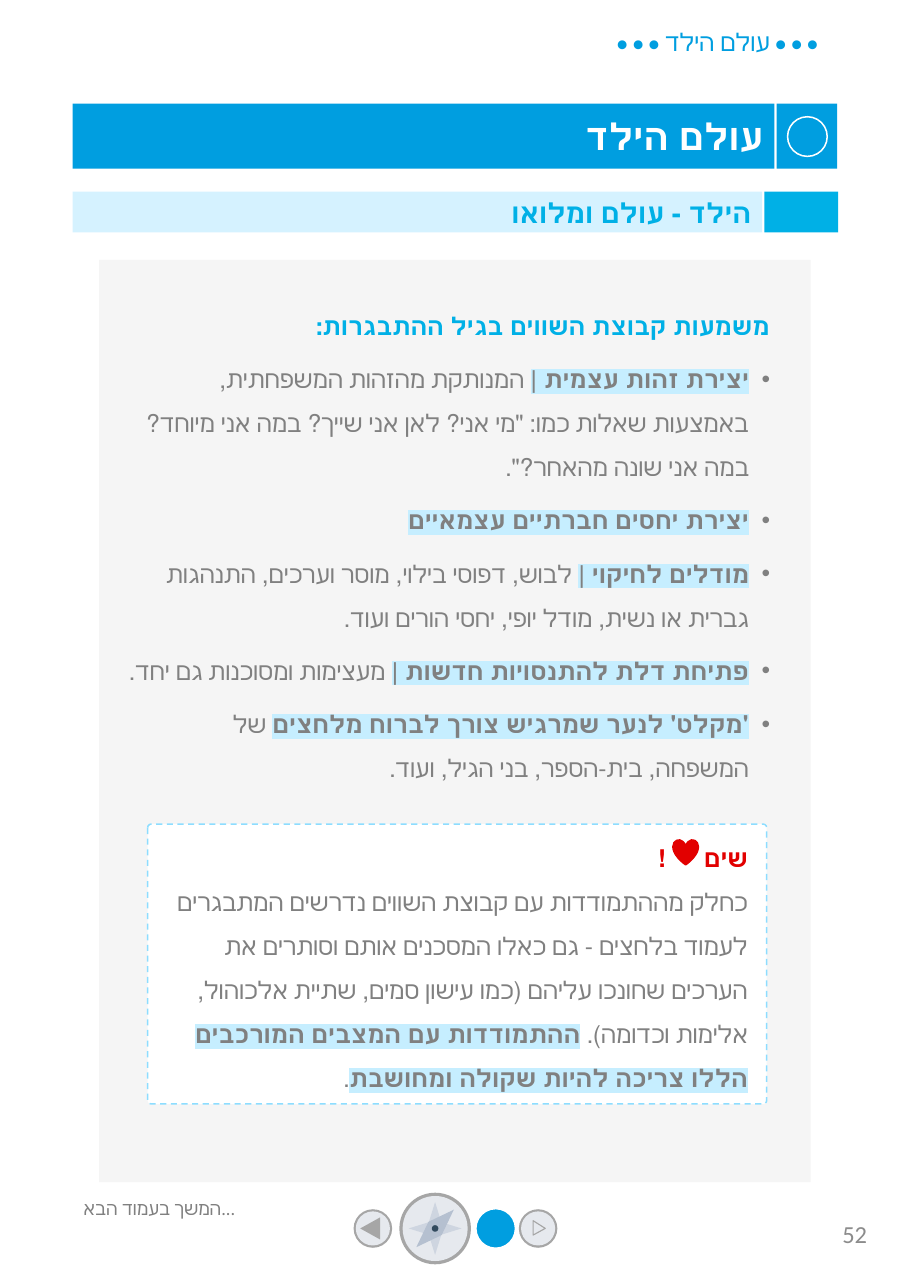
from math import cos, pi, sin

from lxml import etree
from pptx import Presentation
from pptx.dml.color import RGBColor
from pptx.enum.dml import MSO_LINE
from pptx.enum.shapes import MSO_SHAPE
from pptx.enum.text import MSO_ANCHOR, MSO_AUTO_SIZE, PP_ALIGN
from pptx.oxml.ns import qn
from pptx.util import Inches, Pt

RECT, OVAL = MSO_SHAPE.RECTANGLE, MSO_SHAPE.OVAL
ROUNDED, HEART = MSO_SHAPE.ROUNDED_RECTANGLE, MSO_SHAPE.HEART
TOP, MIDDLE = MSO_ANCHOR.TOP, MSO_ANCHOR.MIDDLE
LEFT, RIGHT = PP_ALIGN.LEFT, PP_ALIGN.RIGHT
GROW, NO_FIT = MSO_AUTO_SIZE.SHAPE_TO_FIT_TEXT, MSO_AUTO_SIZE.NONE
DASH = MSO_LINE.DASH

WHITE = RGBColor(0xFF, 0xFF, 0xFF)
BLUE = RGBColor(0x00, 0x9E, 0xE0)
CYAN = RGBColor(0x00, 0xB0, 0xE6)
PALE_CYAN = RGBColor(0xD5, 0xF2, 0xFF)
DASH_BLUE = RGBColor(0x8D, 0xDD, 0xFF)
PANEL_GREY = RGBColor(0xF5, 0xF5, 0xF5)
TEXT_GREY = RGBColor(0x80, 0x80, 0x80)
PAGE_GREY = RGBColor(0x8C, 0x8C, 0x8C)
RED = RGBColor(0xE2, 0x00, 0x00)
RING_GREY = RGBColor(0xA6, 0xA6, 0xA6)
DISC_GREY = RGBColor(0xE6, 0xE9, 0xEE)
STAR_GREY = RGBColor(0xCE, 0xD5, 0xE0)
NEEDLE_GREY = RGBColor(0xB5, 0xC0, 0xD0)
PIVOT_NAVY = RGBColor(0x32, 0x4A, 0x5E)
HIGHLIGHT = "C6EEFF"

SANS, MONO = "Calibri", "Noto Sans Mono"
NAV_Y = 11.15
BODY_FORMAT = {"alignment": RIGHT, "line_spacing": 1.5, "space_after": Pt(6)}
NOTE_FORMAT = {"alignment": RIGHT, "line_spacing": 1.5}

# Each point: highlighted lead, then plain remainder
POINTS = [
    ("יצירת זהות עצמית |", " המנותקת מהזהות המשפחתית, באמצעות שאלות כמו: "
     "\"מי אני? לאן אני שייך? במה אני מיוחד? במה אני שונה מהאחר?\"."),
    ("יצירת יחסים חברתיים עצמאיים", ""),
    ("מודלים לחיקוי |", " לבוש, דפוסי בילוי, מוסר וערכים, התנהגות גברית או "
     "נשית, מודל יופי, יחסי הורים ועוד."),
    ("פתיחת דלת להתנסויות חדשות |", " מעצימות ומסוכנות גם יחד."),
    ("'מקלט' לנער שמרגיש צורך לברוח מלחצים",
     " של המשפחה, בית-הספר, בני הגיל, ועוד."),
]
NOTE_START = ("כחלק מההתמודדות עם קבוצת השווים נדרשים המתבגרים לעמוד בלחצים - "
              "גם כאלו המסכנים אותם וסותרים את הערכים שחונכו עליהם (כמו עישון "
              "סמים, שתיית אלכוהול, אלימות וכדומה). ")
NOTE_KEY = "ההתמודדות עם המצבים המורכבים הללו צריכה להיות שקולה ומחושבת"


def paint(shape, fill=None, line=None, width=1):
    shape.shadow.inherit = False
    if fill is None:
        shape.fill.background()
    else:
        shape.fill.solid()
        shape.fill.fore_color.rgb = fill
    if line is None:
        shape.line.fill.background()
    else:
        shape.line.color.rgb = line
        shape.line.width = Pt(width)
    return shape


def add_block(shapes, preset, box, fill, line=None):
    block = shapes.add_shape(preset, *(Inches(v) for v in box))
    return paint(block, fill, line)


def add_disc(shapes, x, diameter, fill, line=None):
    box = (x - diameter / 2, NAV_Y - diameter / 2, diameter, diameter)
    return add_block(shapes, OVAL, box, fill, line)


def add_polygon(shapes, points, fill=None, line=None):
    corners = [(Inches(x), Inches(y)) for x, y in points]
    builder = shapes.build_freeform(*corners[0], scale=1.0)
    builder.add_line_segments(corners[1:], close=True)
    return paint(builder.convert_to_shape(), fill, line, 0.75)


def set_frame(shape, anchor=TOP, fit=NO_FIT):
    frame = shape.text_frame
    frame.word_wrap = True
    frame.vertical_anchor = anchor
    frame.auto_size = fit
    return frame


def add_textbox(shapes, box, anchor=TOP, fit=GROW):
    return set_frame(shapes.add_textbox(*(Inches(v) for v in box)), anchor, fit)


def format_paragraph(paragraph, values, rtl=True):
    for name, value in values.items():
        setattr(paragraph, name, value)
    if rtl:
        paragraph._p.get_or_add_pPr().set("rtl", "1")


def add_bullet(paragraph):
    properties = paragraph._p.get_or_add_pPr()
    properties.set("marR", "0")
    properties.set("marL", str(Inches(0.19)))
    properties.set("indent", str(Inches(-0.19)))
    etree.SubElement(properties, qn("a:buFont"), typeface="Arial")
    etree.SubElement(properties, qn("a:buChar"), char="•")


def add_tab_stop(paragraph, position):
    tabs = etree.SubElement(paragraph._p.get_or_add_pPr(), qn("a:tabLst"))
    etree.SubElement(tabs, qn("a:tab"), pos=str(Inches(position)), algn="l")


def add_run(paragraph, text, color, size=16, bold=False, face=SANS, marked=False):
    run = paragraph.add_run()
    run.text = text
    for name, value in {"size": Pt(size), "bold": bold, "name": face}.items():
        setattr(run.font, name, value)
    run.font.color.rgb = color
    properties = run._r.get_or_add_rPr()
    properties.set("lang", "he-IL")
    if marked:
        highlight = etree.Element(qn("a:highlight"))
        etree.SubElement(highlight, qn("a:srgbClr"), val=HIGHLIGHT)
        properties.find(qn("a:solidFill")).addnext(highlight)


def add_line_of_text(frame, text, color, align=RIGHT, rtl=False, **font):
    paragraph = frame.paragraphs[0]
    format_paragraph(paragraph, {"alignment": align}, rtl)
    add_run(paragraph, text, color, **font)


def add_headings(slide):
    shapes = slide.shapes
    header = add_textbox(shapes, (4.72, 0.2, 2.8, 0.37))
    add_line_of_text(header, "• • • עולם הילד • • •", BLUE, rtl=True, face=MONO)

    title = paint(shapes.title, BLUE)
    place = {"left": 0.66, "top": 0.94, "width": 6.37, "height": 0.59}
    for name, value in place.items():
        setattr(title, name, Inches(value))
    add_line_of_text(set_frame(title, MIDDLE), "עולם הילד", WHITE, rtl=True,
                     size=24, bold=True, face=MONO)
    add_block(shapes, RECT, (7.05, 0.94, 0.55, 0.59), BLUE)
    add_block(shapes, OVAL, (7.15, 1.06, 0.36, 0.36), BLUE, WHITE)

    add_block(shapes, RECT, (6.94, 1.74, 0.67, 0.37), CYAN)
    subtitle = add_block(shapes, RECT, (0.66, 1.74, 6.26, 0.37), PALE_CYAN)
    add_line_of_text(set_frame(subtitle, MIDDLE), "הילד - עולם ומלואו", CYAN,
                     size=18, bold=True)


def add_navigation(slide):
    shapes = slide.shapes.add_group_shape().shapes
    back_x, compass_x, home_x, next_x = 3.385, 3.95, 4.5, 4.885
    buttons = [(compass_x, (0.73, 0.65, 0.59)), (next_x, (0.39, 0.35, 0.31)),
               (back_x, (0.39, 0.35, 0.31))]
    for x, diameters in buttons:
        for diameter, fill in zip(diameters, (WHITE, RING_GREY, DISC_GREY)):
            add_disc(shapes, x, diameter, fill)
    add_disc(shapes, home_x, 0.36, BLUE, WHITE)

    # Compass star, needle and pivot
    radii = [0.24, 0.08] * 4
    star = [(compass_x + r * sin(i * pi / 4), NAV_Y - r * cos(i * pi / 4))
            for i, r in enumerate(radii)]
    add_polygon(shapes, star, STAR_GREY)
    needle = [(-0.06, -0.06), (-0.17, 0.17), (0.06, 0.06), (0.17, -0.17)]
    add_polygon(shapes, [(compass_x + x, NAV_Y + y) for x, y in needle], NEEDLE_GREY)
    add_disc(shapes, compass_x, 0.06, PIVOT_NAVY)

    # Arrows of the next and back buttons
    add_polygon(shapes, [(4.84, 11.08), (4.95, 11.15), (4.84, 11.21)], line=RING_GREY)
    add_polygon(shapes, [(3.27, 11.15), (3.45, 11.25), (3.45, 11.05)], RING_GREY)


def add_peer_group_points(slide):
    add_block(slide.shapes, RECT, (0.9, 2.36, 6.46, 8.37), PANEL_GREY)
    frame = add_textbox(slide.shapes, (1.06, 2.64, 6.03, 4.51))
    heading = frame.paragraphs[0]
    format_paragraph(heading, BODY_FORMAT)
    add_run(heading, "משמעות קבוצת השווים בגיל ההתבגרות:", CYAN, bold=True)
    for lead, remainder in POINTS:
        point = frame.add_paragraph()
        format_paragraph(point, BODY_FORMAT)
        add_bullet(point)
        add_run(point, lead, TEXT_GREY, bold=True, marked=True)
        if remainder:
            add_run(point, remainder, TEXT_GREY)


def add_attention_note(slide):
    card = add_block(slide.shapes, ROUNDED, (1.34, 7.48, 5.62, 2.54), WHITE, DASH_BLUE)
    card.adjustments[0] = 0.013
    card.line.dash_style = DASH
    frame = add_textbox(slide.shapes, (1.33, 7.47, 5.56, 2.48))
    call = frame.paragraphs[0]
    format_paragraph(call, NOTE_FORMAT)
    add_tab_stop(call, 0.82)
    add_run(call, "שים\t!", RED, bold=True)
    note = frame.add_paragraph()
    format_paragraph(note, NOTE_FORMAT)
    add_run(note, NOTE_START, TEXT_GREY)
    add_run(note, NOTE_KEY, TEXT_GREY, bold=True, marked=True)
    add_run(note, ".", TEXT_GREY)
    add_block(slide.shapes, HEART, (6.11, 7.62, 0.23, 0.23), RED, RED)


def add_footer(slide):
    continued = add_textbox(slide.shapes, (0.66, 10.82, 2.24, 0.3))
    add_line_of_text(continued, "המשך בעמוד הבא...", TEXT_GREY, LEFT, size=12)
    page = add_textbox(slide.shapes, (7.38, 10.89, 0.59, 0.62), MIDDLE, NO_FIT)
    add_line_of_text(page, "52", PAGE_GREY)


def main():
    deck = Presentation()
    deck.slide_width, deck.slide_height = Inches(8.27), Inches(11.69)
    slide = deck.slides.add_slide(deck.slide_layouts[5])
    for add_part in (add_headings, add_navigation, add_peer_group_points,
                     add_attention_note, add_footer):
        add_part(slide)
    deck.save("out.pptx")


if __name__ == "__main__":
    main()
